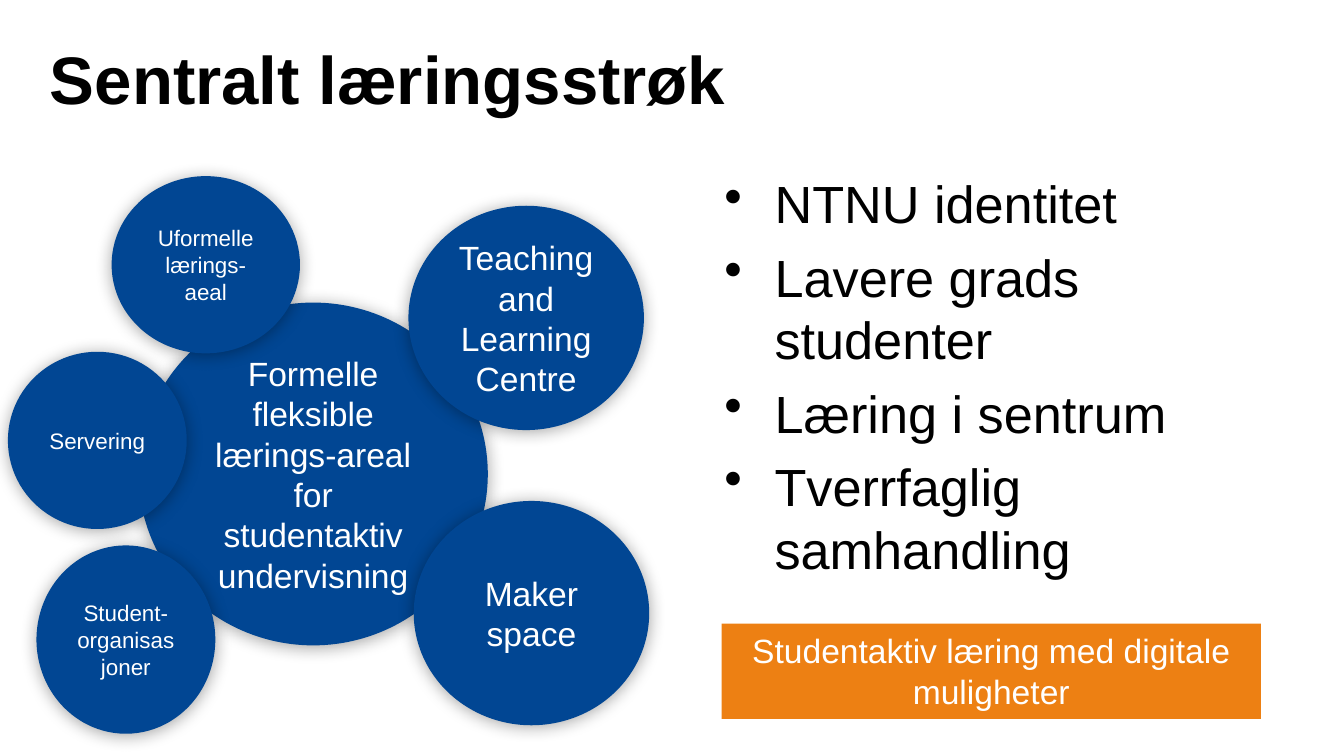
from lxml.etree import SubElement
from pptx import Presentation
from pptx.dml.color import RGBColor
from pptx.enum.shapes import MSO_SHAPE
from pptx.enum.text import MSO_ANCHOR, MSO_AUTO_SIZE, PP_ALIGN
from pptx.oxml.ns import qn
from pptx.util import Cm, Pt

BLUE, ORANGE, WHITE, BLACK = "014693", "ED8013", "FFFFFF", "000000"

# Circles from back to front: text, left, top, width, height (cm), text size
CIRCLES = [
    ("Formelle fleksible lærings-areal for studentaktiv undervisning",
     2.62, 5.72, 6.6, 6.48, 18),
    ("Teaching and Learning Centre", 7.72, 3.89, 4.45, 4.24, 18),
    ("Maker space", 7.82, 9.47, 4.45, 4.24, 18),
    ("Servering", 0.15, 6.65, 3.38, 3.35, 12),
    ("Uformelle lærings-aeal", 2.11, 3.33, 3.56, 3.35, 12),
    ("Student-organisasjoner", 0.69, 10.31, 3.38, 3.56, 12),
]
POINTS = [
    "NTNU identitet",
    "Lavere grads studenter",
    "Læring i sentrum",
    "Tverrfaglig samhandling",
]


def rgb(code):
    return RGBColor.from_string(code)


def add_text(paragraph, text, size, color, bold=False):
    run = paragraph.add_run()
    run.text = text
    run.font.name = "Arial"
    run.font.size = Pt(size)
    run.font.bold = bold
    run.font.color.rgb = rgb(color)


def set_title(slide, text):
    title = slide.shapes.title
    title.left, title.top = Cm(0.69), Cm(0.58)
    title.width, title.height = Cm(23.75), Cm(1.8)
    frame = title.text_frame
    frame.word_wrap = True
    frame.auto_size = MSO_AUTO_SIZE.SHAPE_TO_FIT_TEXT
    frame.vertical_anchor = MSO_ANCHOR.TOP
    frame.paragraphs[0].alignment = PP_ALIGN.LEFT
    add_text(frame.paragraphs[0], text, 36, BLACK, bold=True)


def add_bullets(slide, points, left, top, width, height):
    box = slide.shapes.add_textbox(Cm(left), Cm(top), Cm(width), Cm(height))
    frame = box.text_frame
    frame.word_wrap = True
    for index, point in enumerate(points):
        paragraph = frame.add_paragraph() if index else frame.paragraphs[0]
        properties = paragraph._p.get_or_add_pPr()
        properties.set("marL", str(Cm(0.95)))
        properties.set("indent", str(-Cm(0.95)))
        SubElement(properties, qn("a:buChar"), char="•")
        if index:
            paragraph.space_before = Pt(5.6)
        add_text(paragraph, point, 28, BLACK)


def add_panel(slide, kind, text, left, top, width, height, size, fill, anchor):
    panel = slide.shapes.add_shape(kind, Cm(left), Cm(top), Cm(width), Cm(height))
    panel.shadow.inherit = False
    panel.fill.solid()
    panel.fill.fore_color.rgb = rgb(fill)
    panel.line.fill.background()
    frame = panel.text_frame
    frame.word_wrap = True
    frame.vertical_anchor = anchor
    frame.paragraphs[0].alignment = PP_ALIGN.CENTER
    add_text(frame.paragraphs[0], text, size, WHITE)
    return panel


def add_soft_shadow(shape):
    effects = shape._element.spPr.find(qn("a:effectLst"))
    shadow = SubElement(effects, qn("a:outerShdw"), blurRad=str(Pt(9)),
                        dist=str(Pt(1)), dir="5400000", rotWithShape="0")
    color = SubElement(shadow, qn("a:srgbClr"), val=BLACK)
    SubElement(color, qn("a:alpha"), val="35000")


def main():
    deck = Presentation()
    deck.slide_width, deck.slide_height = Cm(25.4), Cm(14.29)
    slide = deck.slides.add_slide(deck.slide_layouts[5])

    # Title and key points
    set_title(slide, "Sentralt læringsstrøk")
    add_bullets(slide, POINTS, 13.44, 3.12, 11.23, 9.42)

    # Overlapping circles of the learning area
    for text, left, top, width, height, size in CIRCLES:
        circle = add_panel(slide, MSO_SHAPE.OVAL, text, left, top, width, height,
                           size, BLUE, MSO_ANCHOR.MIDDLE)
        add_soft_shadow(circle)

    # Orange banner
    banner = add_panel(slide, MSO_SHAPE.RECTANGLE,
                       "Studentaktiv læring med digitale muligheter",
                       13.64, 11.79, 10.19, 1.8, 18, ORANGE, MSO_ANCHOR.TOP)
    banner.text_frame.auto_size = MSO_AUTO_SIZE.SHAPE_TO_FIT_TEXT

    deck.save("out.pptx")


if __name__ == "__main__":
    main()
